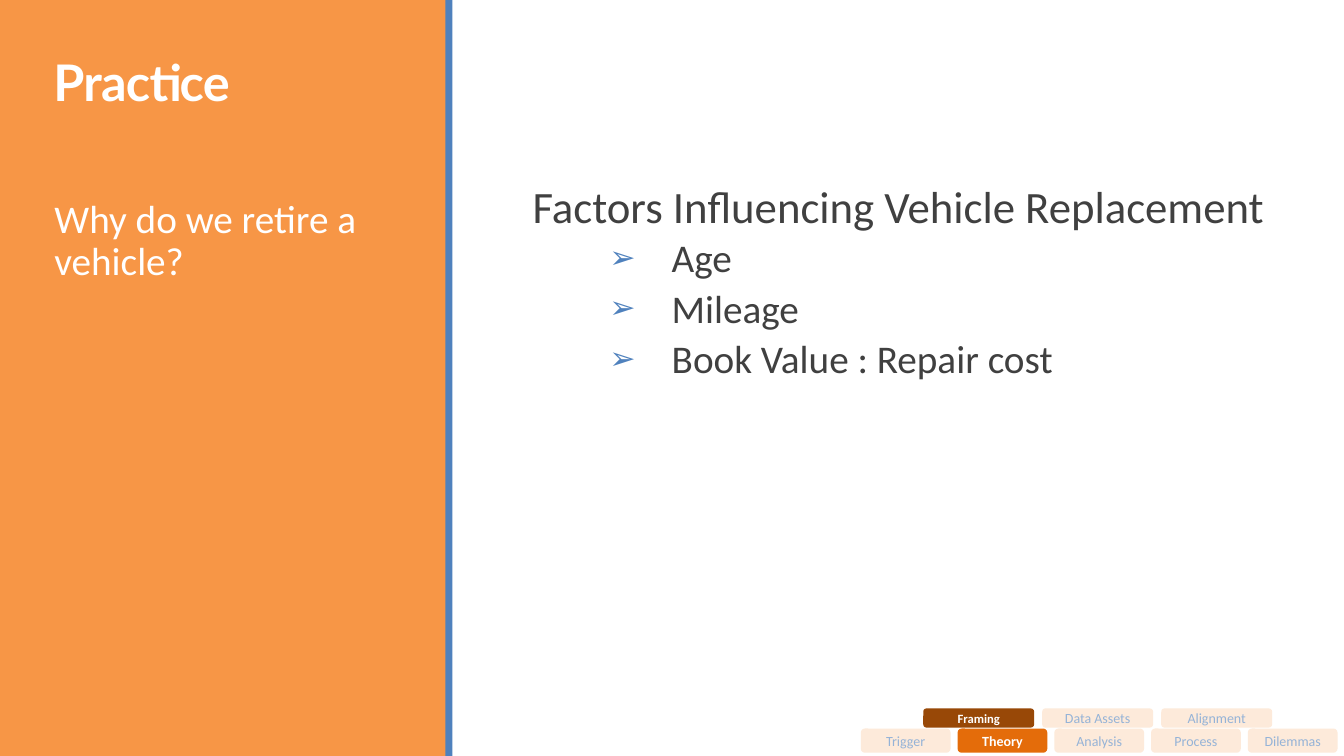
from dataclasses import dataclass

from lxml import etree
from pptx import Presentation
from pptx.dml.color import RGBColor
from pptx.enum.shapes import MSO_SHAPE
from pptx.enum.text import MSO_ANCHOR, PP_ALIGN
from pptx.oxml.ns import qn
from pptx.util import Pt

RECT, ROUNDED = MSO_SHAPE.RECTANGLE, MSO_SHAPE.ROUNDED_RECTANGLE
TOP, MIDDLE, BOTTOM = MSO_ANCHOR.TOP, MSO_ANCHOR.MIDDLE, MSO_ANCHOR.BOTTOM
LEFT, CENTER = PP_ALIGN.LEFT, PP_ALIGN.CENTER

WHITE = RGBColor(0xFF, 0xFF, 0xFF)
ORANGE = RGBColor(0xF7, 0x96, 0x46)
BLUE = RGBColor(0x4F, 0x81, 0xBD)
GRAY = RGBColor(0x40, 0x40, 0x40)
PALE_ORANGE = RGBColor(0xFD, 0xEA, 0xDA)
PALE_BLUE = RGBColor(0x95, 0xB3, 0xD7)
DARK_ORANGE = RGBColor(0xE4, 0x6C, 0x0A)
BROWN = RGBColor(0x98, 0x48, 0x07)


@dataclass
class Tab:
    label: str
    fill: RGBColor = PALE_ORANGE
    color: RGBColor = PALE_BLUE
    size: float = 10
    bold: bool = False


@dataclass
class TabRow:
    left: float
    top: float
    width: float
    height: float
    pitch: float
    tabs: list[Tab]


TAB_ROWS = [
    TabRow(614.9, 520.4, 64.1, 17.3, 69.1, [
        Tab("Trigger"),
        Tab("Theory", DARK_ORANGE, WHITE, bold=True),
        Tab("Analysis"),
        Tab("Process"),
        Tab("Dilemmas"),
    ]),
    TabRow(659.5, 506, 79.2, 13.7, 85, [
        Tab("Framing", BROWN, WHITE, 9, True),
        Tab("Data Assets"),
        Tab("Alignment"),
    ]),
]
FACTORS = ["Age", "Mileage", "Book Value : Repair cost"]


def add_box(slide, kind, left: float, top: float, width: float,
            height: float, fill: RGBColor):
    sp = slide.shapes.add_shape(kind, Pt(left), Pt(top), Pt(width), Pt(height))
    sp.shadow.inherit = False
    sp.fill.solid()
    sp.fill.fore_color.rgb = fill
    sp.line.fill.background()
    return sp


def add_frame(slide, left: float, top: float, width: float, height: float):
    return slide.shapes.add_textbox(
        Pt(left), Pt(top), Pt(width), Pt(height)).text_frame


def set_frame(tf, inset_x: float, inset_y: float, anchor=TOP) -> None:
    tf.word_wrap = True
    tf.margin_left = tf.margin_right = Pt(inset_x)
    tf.margin_top = tf.margin_bottom = Pt(inset_y)
    tf.vertical_anchor = anchor


def write(p, text: str, *, size: float, color: RGBColor, font: str = "Calibri",
          bold: bool = False, align=LEFT, line: float = 1.0,
          before: float = 0, after: float = 0, tracking: float = 0) -> None:
    p.alignment = align
    p.line_spacing = line
    p.space_before, p.space_after = Pt(before), Pt(after)
    r = p.add_run()
    r.text = text
    r.font.name, r.font.size, r.font.bold = font, Pt(size), bold
    r.font.color.rgb = color
    if tracking:
        r.font._element.set("spc", str(round(tracking * 100)))


def add_bullet(p, char: str, color: RGBColor, left: float, hanging: float) -> None:
    pPr = p._p.get_or_add_pPr()
    pPr.set("marL", str(Pt(left)))
    pPr.set("indent", str(-Pt(hanging)))
    clr = etree.SubElement(pPr, qn("a:buClr"))
    etree.SubElement(clr, qn("a:srgbClr"), val=str(color))
    etree.SubElement(pPr, qn("a:buSzPct"), val="80000")
    etree.SubElement(pPr, qn("a:buFont"), typeface="Calibri")
    etree.SubElement(pPr, qn("a:buChar"), char=char)


def add_tab_row(slide, row: TabRow) -> None:
    for i, tab in enumerate(row.tabs):
        sp = add_box(slide, ROUNDED, row.left + i * row.pitch, row.top,
                     row.width, row.height, tab.fill)
        set_frame(sp.text_frame, 6.5, 2.9, MIDDLE)
        write(sp.text_frame.paragraphs[0], tab.label, size=tab.size,
              color=tab.color, bold=tab.bold, align=CENTER)


def main() -> None:
    prs = Presentation()
    prs.slide_width, prs.slide_height = Pt(960), Pt(540)
    slide = prs.slides.add_slide(prs.slide_layouts[6])

    add_box(slide, RECT, 0, 0, 319, 540, ORANGE)
    add_box(slide, RECT, 318.2, 0, 5, 540, BLUE)

    tf = add_frame(slide, 31, 23, 242.6, 60.5)
    set_frame(tf, 7.2, 3.6, BOTTOM)
    write(tf.paragraphs[0], "Practice", size=36, color=WHITE, font="Lato",
          bold=True, line=0.85, tracking=-0.5)

    tf = add_frame(slide, 38.9, 139, 265.7, 277)
    set_frame(tf, 0, 3.6)
    write(tf.paragraphs[0], "Why do we retire a vehicle?", size=28,
          color=WHITE, line=0.9, after=2)

    tf = add_frame(slide, 380.4, 128.2, 538.6, 358.6)
    set_frame(tf, 0, 3.6)
    write(tf.paragraphs[0], "Factors Influencing Vehicle Replacement",
          size=32, color=GRAY, line=0.9, before=12, after=2)
    for factor in FACTORS:
        p = tf.add_paragraph()
        p.level = 2
        write(p, factor, size=28, color=GRAY, line=0.9, before=2, after=4)
        add_bullet(p, "➢", BLUE, 99.4, 44.6)

    for row in TAB_ROWS:
        add_tab_row(slide, row)

    prs.save("out.pptx")


if __name__ == "__main__":
    main()
